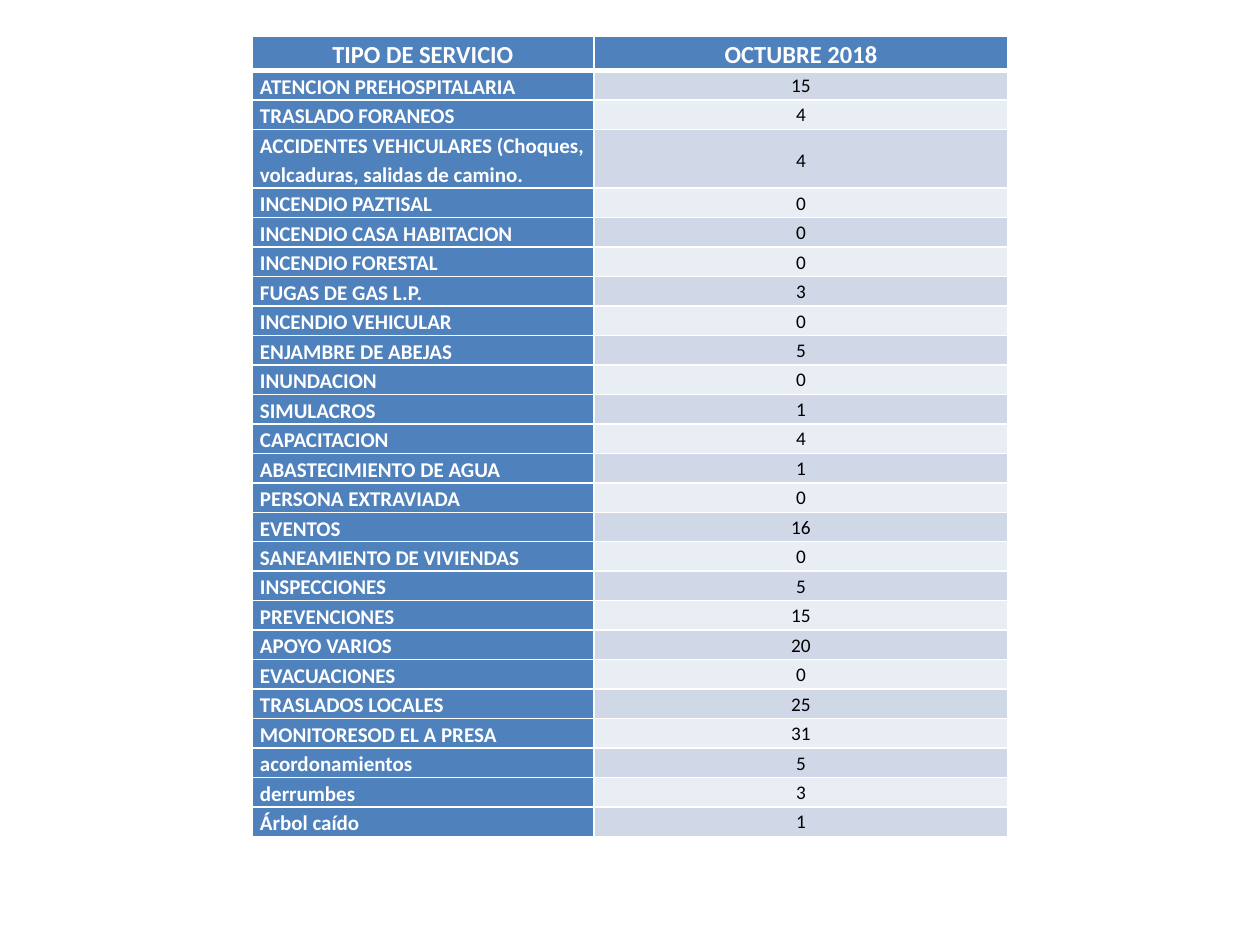
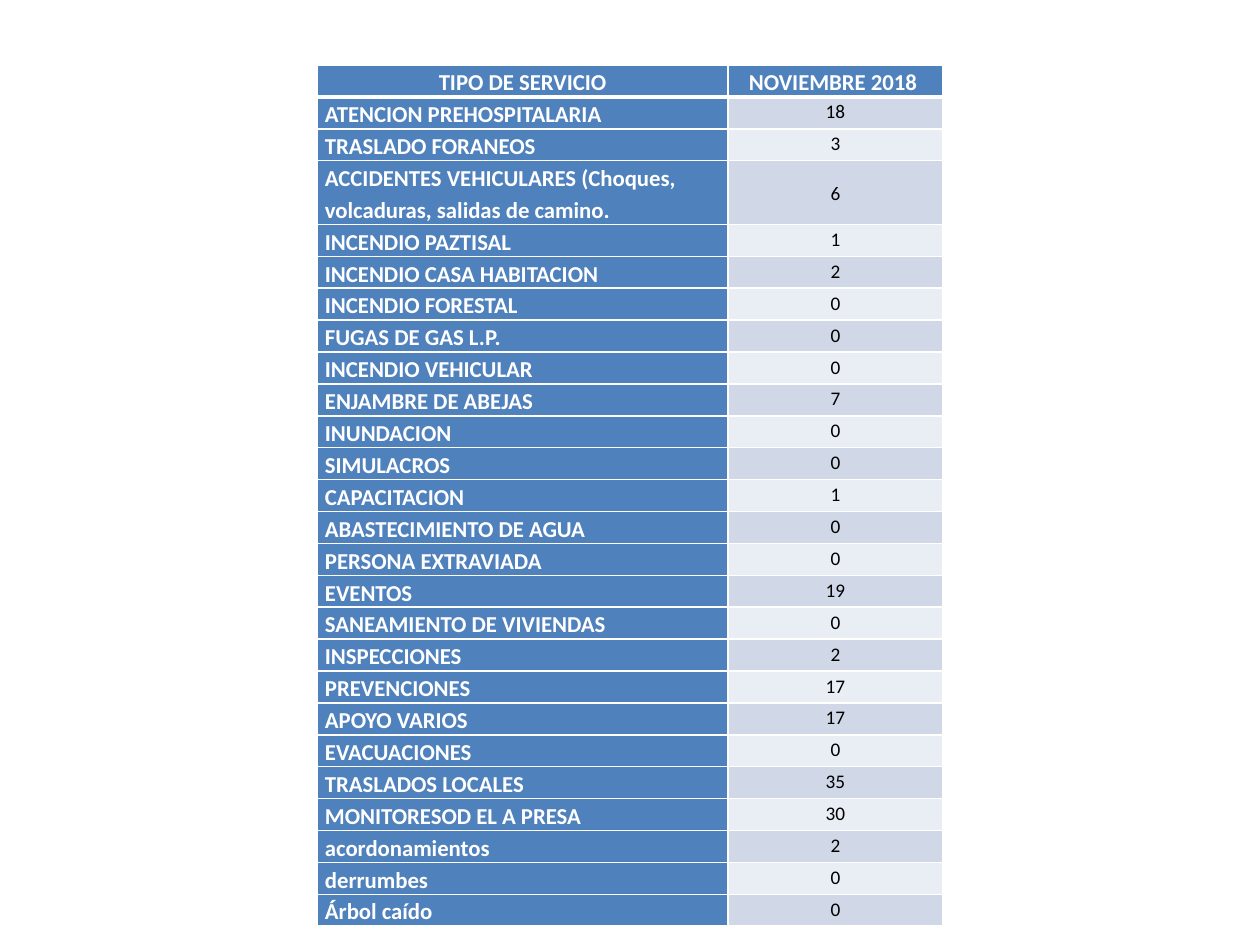
from pptx import Presentation
from pptx.dml.color import RGBColor
from pptx.enum.text import MSO_ANCHOR, PP_ALIGN
from pptx.oxml.ns import qn
from pptx.util import Pt
from lxml import etree

LEFT, CENTER = PP_ALIGN.LEFT, PP_ALIGN.CENTER
TOP, MIDDLE = MSO_ANCHOR.TOP, MSO_ANCHOR.MIDDLE
SCALE = 9144000 / 1260
FONT = "Calibri"
BLUE, WHITE, BLACK = "4F81BD", "FFFFFF", "000000"
BANDS = ("D0D8E8", "E9EDF4")
PAD = 8
VALUE_SIZE = 11
TALL_ROW = 3

SERVICES = (
    "ATENCION PREHOSPITALARIA",
    "TRASLADO FORANEOS",
    "ACCIDENTES VEHICULARES (Choques, volcaduras, salidas de camino.",
    "INCENDIO PAZTISAL",
    "INCENDIO CASA HABITACION",
    "INCENDIO FORESTAL",
    "FUGAS DE GAS L.P.",
    "INCENDIO VEHICULAR",
    "ENJAMBRE DE ABEJAS",
    "INUNDACION",
    "SIMULACROS",
    "CAPACITACION",
    "ABASTECIMIENTO DE AGUA",
    "PERSONA EXTRAVIADA",
    "EVENTOS",
    "SANEAMIENTO DE VIVIENDAS",
    "INSPECCIONES",
    "PREVENCIONES",
    "APOYO VARIOS",
    "EVACUACIONES",
    "TRASLADOS LOCALES",
    "MONITORESOD EL A PRESA",
    "acordonamientos",
    "derrumbes",
    "Árbol caído",
)
OCTOBER = (15, 4, 4, 0, 0, 0, 3, 0, 5, 0, 1, 4, 1, 0, 16, 0, 5, 15, 20, 0, 25, 31, 5, 3, 1)
NOVEMBER = (18, 3, 6, 1, 2, 0, 0, 0, 7, 0, 0, 1, 0, 0, 19, 0, 2, 17, 17, 0, 35, 30, 2, 0, 0)


def px(count):
    """Turn px into EMU."""
    return round(count * SCALE)


def color(code):
    """Turn a hex string into a colour."""
    return RGBColor.from_string(code)


def add_edges(cell, top, bottom):
    """Draw white borders, with top and bottom widths in points."""
    props = cell._tc.get_or_add_tcPr()
    for side, width in (("L", 1), ("R", 1), ("T", top), ("B", bottom)):
        line = etree.SubElement(props, qn(f"a:ln{side}"), w=str(Pt(width)))
        fill = etree.SubElement(line, qn("a:solidFill"))
        etree.SubElement(fill, qn("a:srgbClr"), val=WHITE)


def fill_cell(cell, text, size, fill, ink, align, bold=True, top=1, bottom=1):
    """Write and format one table cell."""
    cell.margin_left = cell.margin_right = px(PAD)
    cell.margin_top = cell.margin_bottom = 0
    add_edges(cell, top, bottom)
    cell.fill.solid()
    cell.fill.fore_color.rgb = color(fill)
    cell.text = text
    para = cell.text_frame.paragraphs[0]
    para.alignment = align
    para.line_spacing = 1.15
    font = para.font
    font.name, font.size, font.bold = FONT, Pt(size), bold
    font.color.rgb = color(ink)


def add_month(deck, month, counts, spot, widths, height, head_size, name_size):
    """Add a slide with the service counts of one month."""
    slide = deck.slides.add_slide(deck.slide_layouts[6])
    total = len(SERVICES) + 1
    frame = slide.shapes.add_table(
        total, 2, *map(px, spot), px(sum(widths)), px(height * (total + 1)))
    table = frame.table
    table.first_col = True
    for column, width in zip(table.columns, widths):
        column.width = px(width)
    for index, row in enumerate(table.rows):
        row.height = px(height * (2 if index == TALL_ROW else 1))

    for col, text in enumerate(("TIPO DE SERVICIO", month)):
        fill_cell(table.cell(0, col), text, head_size, BLUE, WHITE, CENTER, bottom=3)
    for row, (name, count) in enumerate(zip(SERVICES, counts), 1):
        top = 3 if row == 1 else 1
        fill_cell(table.cell(row, 0), name, name_size, BLUE, WHITE, LEFT, top=top)
        value = table.cell(row, 1)
        fill_cell(value, str(count), VALUE_SIZE, BANDS[(row - 1) % 2], BLACK,
                  CENTER, bold=False, top=top)
        value.vertical_anchor = MIDDLE if row == TALL_ROW else TOP


def main():
    """Build and save the monthly service slides."""
    deck = Presentation()
    deck.slide_width, deck.slide_height = px(1260), px(945)
    add_month(deck, "OCTUBRE 2018", OCTOBER, (252, 36), (342, 414), 29, 14, 12)
    add_month(deck, "NOVIEMBRE 2018 ", NOVEMBER, (317, 65), (411, 215), 31, 13, 13)
    deck.save("out.pptx")


if __name__ == "__main__":
    main()
